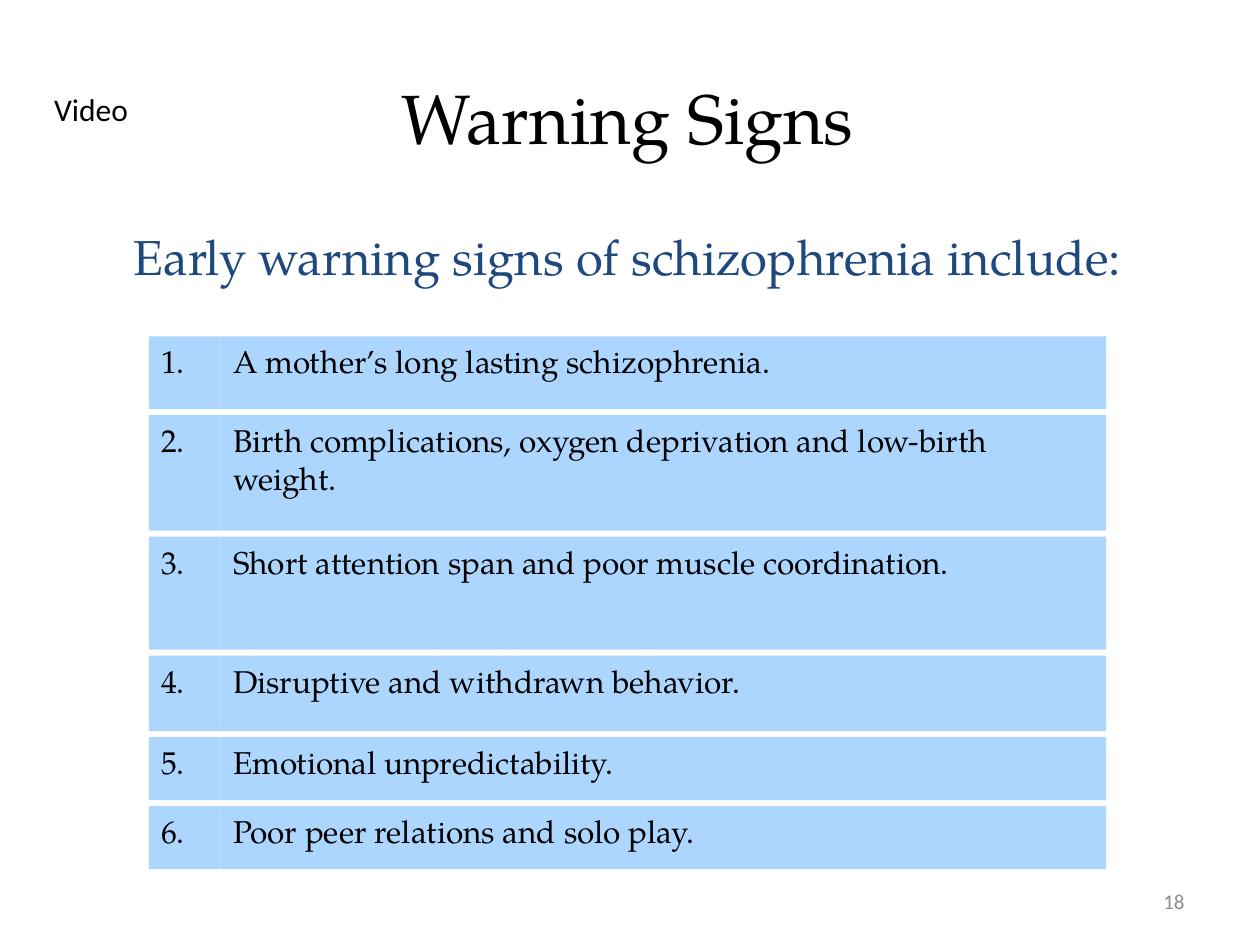
from pptx import Presentation
from pptx import util as u
from pptx.dml.color import RGBColor
from pptx.enum import shapes, text

SERIF, SANS = "TeX Gyre Pagella", "Calibri"
BLACK, NAVY, GREY, SKY = "000000", "1F497D", "8C8C8C", "ADD6FF"

# Content: each warning sign with its row height in cm
SIGNS = [
    ("A mother’s long lasting schizophrenia.", 1.47),
    ("Birth complications, oxygen deprivation and low-birth weight.", 2.33),
    ("Short attention span and poor muscle coordination.", 2.28),
    ("Disruptive and withdrawn behavior.", 1.52),
    ("Emotional unpredictability.", 1.27),
    ("Poor peer relations and solo play.", 1.27),
]
LIST_LEFT, LIST_TOP, ROW_GAP = 3, 6.78, 0.12
NUMBER_WIDTH, SIGN_WIDTH = 1.45, 17.85


def color(value):
    return RGBColor.from_string(value)


def add_text(page, words, left, top, width, height, *, size=18, font=SERIF,
             ink=BLACK, fill=None, align="LEFT", anchor="TOP", before=0):
    place = [u.Cm(length) for length in (left, top, width, height)]
    if fill:
        box = page.shapes.add_shape(shapes.MSO_SHAPE.RECTANGLE, *place)
        box.shadow.inherit = False
        box.fill.solid()
        box.fill.fore_color.rgb = color(fill)
        box.line.fill.background()
    else:
        box = page.shapes.add_textbox(*place)
    frame = box.text_frame
    frame.word_wrap = True
    frame.vertical_anchor = text.MSO_ANCHOR[anchor]
    para = frame.paragraphs[0]
    para.alignment = text.PP_ALIGN[align]
    para.space_before = u.Pt(before)
    span = para.add_run()
    span.text = words
    span.font.size = u.Pt(size)
    span.font.name = font
    span.font.color.rgb = color(ink)


deck = Presentation()
deck.slide_width, deck.slide_height = u.Cm(25.4), u.Cm(19.05)
page = deck.slides.add_slide(deck.slide_layouts[6])

# Headings
add_text(page, "Warning Signs", 1.85, 0.76, 21.6, 3.18,
         size=40, align="CENTER", anchor="MIDDLE")
add_text(page, "Early warning signs of schizophrenia include:",
         1.85, 4.45, 21.6, 1.9, size=28, ink=NAVY, align="CENTER")

# Numbered list: a number box and a sign box per row
top = LIST_TOP
for number, (sign, height) in enumerate(SIGNS, start=1):
    add_text(page, f"{number}.", LIST_LEFT, top, NUMBER_WIDTH, height,
             fill=SKY, before=3.6)
    add_text(page, sign, LIST_LEFT + NUMBER_WIDTH, top, SIGN_WIDTH, height,
             fill=SKY, before=3.6)
    top += height + ROW_GAP

# Video label and page number
add_text(page, "Video", 0.84, 1.7, 6.55, 1.02, font=SANS)
add_text(page, "18", 18.21, 17.65, 5.92, 1.02, size=12, font=SANS,
         ink=GREY, align="RIGHT", anchor="MIDDLE")

deck.save("out.pptx")
